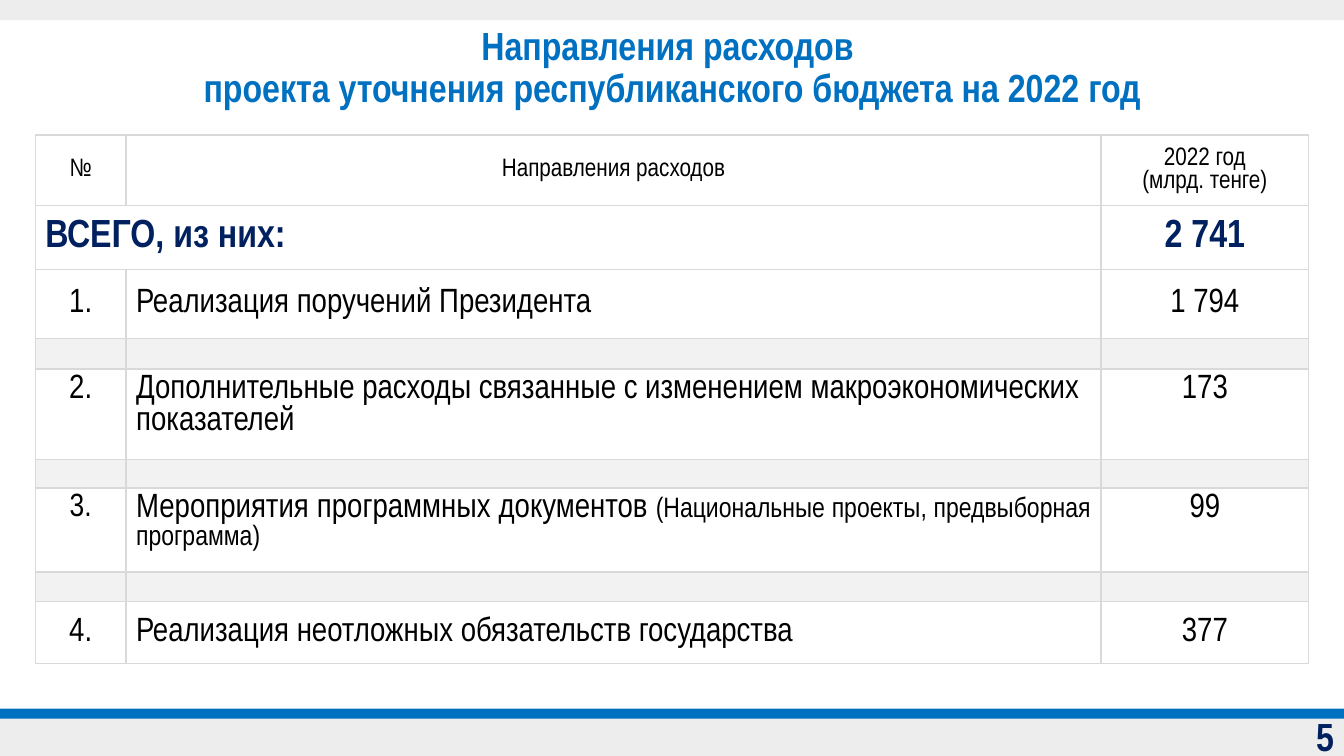
from lxml.etree import SubElement
from pptx import Presentation
from pptx.dml.color import RGBColor
from pptx.enum.shapes import MSO_SHAPE
from pptx.enum.text import MSO_ANCHOR, PP_ALIGN
from pptx.oxml.ns import qn
from pptx.util import Inches, Pt

# Content
TITLE = "Направления расходов \vпроекта уточнения республиканского бюджета на 2022 год"
PAGE = "5"
HEAD = ("№", "Направления расходов", "2022 год\n(млрд. тенге)")
TOTAL = ("ВСЕГО, из них:", "2 741")
ITEMS = [  # number, name, small note, sum, anchor
    ("1.", "Реализация поручений Президента", "", "1 794", "mid"),
    ("2.", "Дополнительные расходы связанные с изменением "
     "макроэкономических показателей", "", "173", "top"),
    ("3.", "Мероприятия программных документов ",
     "(Национальные проекты, предвыборная программа)", "99", "top"),
    ("4.", "Реализация неотложных обязательств государства", "", "377", "mid"),
]
COLS = (0.9, 9.67, 2.06)
ROWS = (0.57, 0.63, 0.69, 0.3, 0.72, 0.28, 0.67, 0.29, 0.62)

# Style
FONT = "Arial Narrow"
BLUE, NAVY, BLACK, WHITE = "0070C0", "002060", "000000", "FFFFFF"
BAR, BAND, EDGE = "EDEDED", "F2F2F2", "D9D9D9"
ALIGN = {"l": PP_ALIGN.LEFT, "c": PP_ALIGN.CENTER,
         "r": PP_ALIGN.RIGHT, "j": PP_ALIGN.JUSTIFY}
ANCHOR = {"mid": MSO_ANCHOR.MIDDLE, "top": MSO_ANCHOR.TOP}
WIDTH = 13.33


def paint(fill, color):
    fill.solid()
    fill.fore_color.rgb = RGBColor.from_string(color)


def write(frame, text, size=24, color=BLACK, bold=False, align="l",
          space=1.0, note="", small=20):
    frame.word_wrap = True
    for i, line in enumerate(text.split("\n")):
        para = frame.add_paragraph() if i else frame.paragraphs[0]
        para.text = line
        para.alignment = ALIGN[align]
        para.line_spacing = space
        sizes = [size] * len(para.runs)
        if note:
            para.add_run().text = note
            sizes.append(small)
        for run, points in zip(para.runs, sizes):
            font = run.font
            font.name, font.size, font.bold = FONT, Pt(points), bold
            paint(font.fill, color)


def box(left, top, width, height, text, **form):
    shape = slide.shapes.add_textbox(*map(Inches, (left, top, width, height)))
    shape.text_frame.vertical_anchor = ANCHOR["mid"]
    write(shape.text_frame, text, **form)


def bar(top, height, color):
    shape = slide.shapes.add_shape(
        MSO_SHAPE.RECTANGLE, 0, Inches(top), Inches(WIDTH), Inches(height))
    shape.shadow.inherit = False
    paint(shape.fill, color)
    shape.line.fill.background()


def frame_cell(cell, color):
    props = cell._tc.get_or_add_tcPr()
    for side in ("a:lnL", "a:lnR", "a:lnT", "a:lnB"):
        line = SubElement(props, qn(side), w=str(Pt(1)))
        fill = SubElement(line, qn("a:solidFill"))
        SubElement(fill, qn("a:srgbClr"), val=EDGE)
    paint(cell.fill, color)


def put(row, col, text, anchor="mid", **form):
    cell = grid.cell(row, col)
    cell.vertical_anchor = ANCHOR[anchor]
    write(cell.text_frame, text, **form)


deck = Presentation()
deck.slide_width, deck.slide_height = Inches(WIDTH), Inches(7.5)
slide = deck.slides.add_slide(deck.slide_layouts[6])

# Title, bars and page number
box(0, 0.26, WIDTH, 0.84, TITLE, size=28, color=BLUE, bold=True,
    align="c", space=0.9)
bar(7.12, 0.38, BAR)
bar(7.03, 0.1, BLUE)
box(10.33, 7.1, 3, 0.4, PAGE, size=28, color=NAVY, bold=True, align="r")
bar(-0.01, 0.21, BAR)

# Table grid
grid = slide.shapes.add_table(
    len(ROWS), len(COLS), Inches(0.35), Inches(1.34),
    Inches(sum(COLS)), Inches(sum(ROWS))).table
grid.first_row = grid.horz_banding = False
for col, width in zip(grid.columns, COLS):
    col.width = Inches(width)
for r, height in enumerate(ROWS):
    grid.rows[r].height = Inches(height)
    gap = r > 2 and r % 2 == 1
    for c in range(len(COLS)):
        cell = grid.cell(r, c)
        frame_cell(cell, BAND if gap else WHITE)
        if gap:  # small type keeps the empty row thin
            para = cell.text_frame.paragraphs[0]._p
            SubElement(para, qn("a:endParaRPr"), sz="800")

# Table text
for c, label in enumerate(HEAD):
    put(0, c, label, size=18, align="c")
grid.cell(1, 0).merge(grid.cell(1, 1))
for c, label, align in zip((0, 2), TOTAL, "lc"):
    put(1, c, label, size=28, color=NAVY, bold=True, align=align)
for i, (num, name, note, value, anchor) in enumerate(ITEMS):
    r = 2 + 2 * i
    put(r, 0, num, anchor, align="c", size=23 if note else 24)
    put(r, 1, name, anchor, align="j" if note else "l", note=note)
    put(r, 2, value, anchor, align="c")

deck.save("out.pptx")
